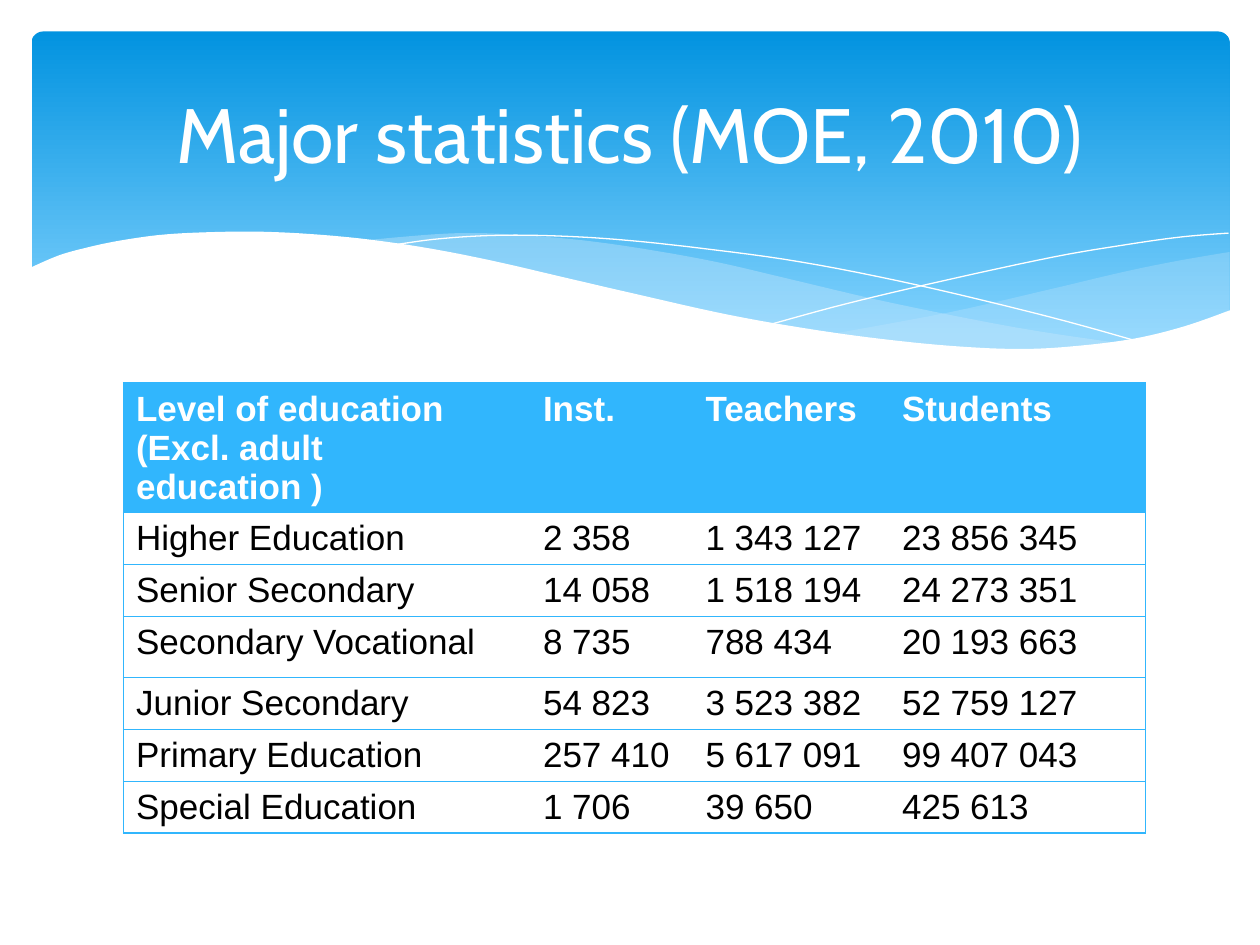
from dataclasses import dataclass
from typing import Optional

from lxml.etree import SubElement
from pptx import Presentation
from pptx.dml.color import RGBColor
from pptx.enum.shapes import MSO_SHAPE as Preset
from pptx.enum.text import MSO_ANCHOR as Anchor, PP_ALIGN as Align
from pptx.oxml.ns import qn
from pptx.util import Inches, Pt

WHITE, BLACK = "FFFFFF", "000000"
SKY, MIST = "31B6FD", "C6E7FC"
CURVE_STEPS = 6

Point = tuple[float, float]


@dataclass
class Wave:
    """Smooth curves through key points, joined by straight lines, in inches."""
    curves: list[list[Point]]
    fill: Optional[str] = None
    opacity: int = 100


@dataclass
class Level:
    name: str
    institutions: str
    teachers: str
    students: str

    def texts(self) -> list[str]:
        return [self.name, self.institutions, self.teachers, self.students]


WAVES = [
    # Pale swell at the right
    Wave([
        [(9.76, 2), (9.35, 2.07), (8.91, 2.16), (8.32, 2.3), (7.53, 2.48), (6.61, 2.65)],
        [(6.61, 2.65), (7.19, 2.72), (7.69, 2.77), (8.14, 2.78), (8.63, 2.75),
         (9.05, 2.69), (9.42, 2.59), (9.76, 2.47)],
    ], MIST, 29),
    # Pale swell in the middle
    Wave([
        [(8.93, 2.73), (8.07, 2.6), (7.06, 2.4), (6.29, 2.22), (5.69, 2.08), (5.14, 1.98),
         (4.65, 1.91), (4.2, 1.87), (3.8, 1.85), (3.44, 1.86), (2.86, 1.91)],
        [(2.86, 1.91), (3.42, 1.99), (4.04, 2.11), (4.91, 2.32), (5.66, 2.48), (6.34, 2.61),
         (6.95, 2.7), (7.48, 2.76), (7.96, 2.78), (8.48, 2.77), (8.93, 2.73)],
    ], MIST, 40),
    # Thin crossing lines
    Wave([[(3.09, 1.95), (3.44, 1.9), (3.87, 1.87), (4.33, 1.87), (4.89, 1.9), (5.56, 1.97),
           (6.36, 2.08), (7.27, 2.26), (8.31, 2.51), (9.07, 2.72)]]),
    Wave([[(6.13, 2.57), (6.72, 2.41), (7.48, 2.23), (8.36, 2.04), (8.95, 1.94),
           (9.38, 1.88), (9.75, 1.85)]]),
    # White foreground
    Wave([
        [(9.77, 2.46), (9.4, 2.59), (8.99, 2.69), (8.5, 2.75), (8.09, 2.77), (7.61, 2.75),
         (7.08, 2.7), (6.48, 2.62), (5.79, 2.5), (5.03, 2.33), (4.47, 2.2), (3.91, 2.07),
         (3.4, 1.97), (2.92, 1.9), (2.5, 1.86), (2.11, 1.84), (1.77, 1.84), (1.32, 1.86),
         (0.95, 1.91), (0.67, 1.97), (0.46, 2.03), (0.23, 2.13)],
        [(0.23, 3.29), (9.77, 3.29)],
    ], WHITE),
]

HEADINGS = ["Level of education\n(Excl. adult education )", "Inst.", "Teachers", "Students"]
LEVELS = [
    Level("Higher Education", "2 358", "1 343 127", "23 856 345"),
    Level("Senior Secondary", "14 058", "1 518 194", "24 273 351"),
    Level("Secondary Vocational", "8 735", "788 434", "20 193 663"),
    Level("Junior Secondary", "54 823", "3 523 382", "52 759 127"),
    Level("Primary Education", "257 410", "5 617 091", "99 407 043"),
    Level("Special Education", "1 706", "39 650", "425 613"),
]
COLUMN_WIDTHS = [3.23, 1.29, 1.56, 2.03]
ROW_HEIGHTS = [1.03, 0.41, 0.41, 0.49, 0.41, 0.41, 0.41]


def color(code: str) -> RGBColor:
    return RGBColor.from_string(code)


def smooth(points: list[Point]) -> list[Point]:
    """Sample a Catmull-Rom curve through the points."""
    padded = [points[0], *points, points[-1]]
    result = [points[0]]
    for a, b, c, d in zip(padded, padded[1:], padded[2:], padded[3:]):
        for step in range(1, CURVE_STEPS + 1):
            t = step / CURVE_STEPS
            x, y = (
                q + t * ((r - p) + t * ((2 * p - 5 * q + 4 * r - s)
                                        + t * (3 * q - p - 3 * r + s))) / 2
                for p, q, r, s in zip(a, b, c, d)
            )
            result.append((x, y))
    return result


def style_text(frame, font: str, size: float, code: str, bold: bool = False) -> None:
    for para in frame.paragraphs:
        for span in para.runs:
            span.font.name, span.font.size = font, Pt(size)
            span.font.bold = bold
            span.font.color.rgb = color(code)


def draw_banner(page) -> None:
    banner = page.shapes.add_shape(
        Preset.ROUNDED_RECTANGLE, Inches(0.25), Inches(0.25), Inches(9.51), Inches(2.7))
    banner.adjustments[0] = 0.034
    banner.shadow.inherit = False
    banner.line.fill.background()
    banner.fill.gradient()
    banner.fill.gradient_angle = 270
    stops = banner.fill.gradient_stops
    for stop, position, code in zip(stops, (0, 0.9), ("0293E0", "83D3FE")):
        stop.position = position
        stop.color.rgb = color(code)


def draw_wave(page, wave: Wave) -> None:
    points = [(Inches(x), Inches(y)) for curve in wave.curves for x, y in smooth(curve)]
    builder = page.shapes.build_freeform(*points[0])
    builder.add_line_segments(points[1:], close=wave.fill is not None)
    shape = builder.convert_to_shape()
    shape.shadow.inherit = False
    if wave.fill is None:
        shape.fill.background()
        shape.line.color.rgb = color(WHITE)
        shape.line.width = Pt(0)
        return
    shape.line.fill.background()
    shape.fill.solid()
    shape.fill.fore_color.rgb = color(wave.fill)
    if wave.opacity < 100:
        tint = shape.element.spPr.find(qn("a:solidFill")).find(qn("a:srgbClr"))
        SubElement(tint, qn("a:alpha"), val=str(wave.opacity * 1000))


def set_borders(cell, visible: set[str]) -> None:
    properties = cell._tc.get_or_add_tcPr()
    for index, side in enumerate(("L", "R", "T", "B")):
        border = SubElement(properties, qn(f"a:ln{side}"), w=str(Pt(0.75)))
        properties.insert(index, border)
        if side in visible:
            paint = SubElement(border, qn("a:solidFill"))
            SubElement(paint, qn("a:srgbClr"), val=SKY)
        else:
            SubElement(border, qn("a:noFill"))


def draw_table(page) -> None:
    rows = [HEADINGS, *(level.texts() for level in LEVELS)]
    table = page.shapes.add_table(
        len(rows), len(HEADINGS), Inches(0.98), Inches(3.04),
        Inches(sum(COLUMN_WIDTHS)), Inches(sum(ROW_HEIGHTS))).table
    for column, width in zip(table.columns, COLUMN_WIDTHS):
        column.width = Inches(width)
    for row, height in zip(table.rows, ROW_HEIGHTS):
        row.height = Inches(height)
    for i, texts in enumerate(rows):
        for j, text in enumerate(texts):
            cell, header = table.cell(i, j), i == 0
            cell.text_frame.text = text
            style_text(cell.text_frame, "Arial", 20, WHITE if header else BLACK, header)
            if header:
                cell.fill.solid()
                cell.fill.fore_color.rgb = color(SKY)
            else:
                cell.fill.background()
            outer = {0: {"L"}, len(texts) - 1: {"R"}}.get(j, set())
            set_borders(cell, {"T", "B"} | outer)


def draw_title(page) -> None:
    box = page.shapes.add_textbox(Inches(0.5), Inches(0.37), Inches(9), Inches(1.37))
    frame = box.text_frame
    frame.word_wrap = True
    frame.vertical_anchor = Anchor.MIDDLE
    frame.text = "Major statistics (MOE, 2010)"
    frame.paragraphs[0].alignment = Align.CENTER
    style_text(frame, "Cabin", 44, WHITE)


def main() -> None:
    deck = Presentation()
    deck.slide_width, deck.slide_height = Inches(10), Inches(7.5)
    page = deck.slides.add_slide(deck.slide_layouts[6])
    draw_banner(page)
    for wave in WAVES:
        draw_wave(page, wave)
    draw_table(page)
    draw_title(page)
    deck.save("out.pptx")


if __name__ == "__main__":
    main()
